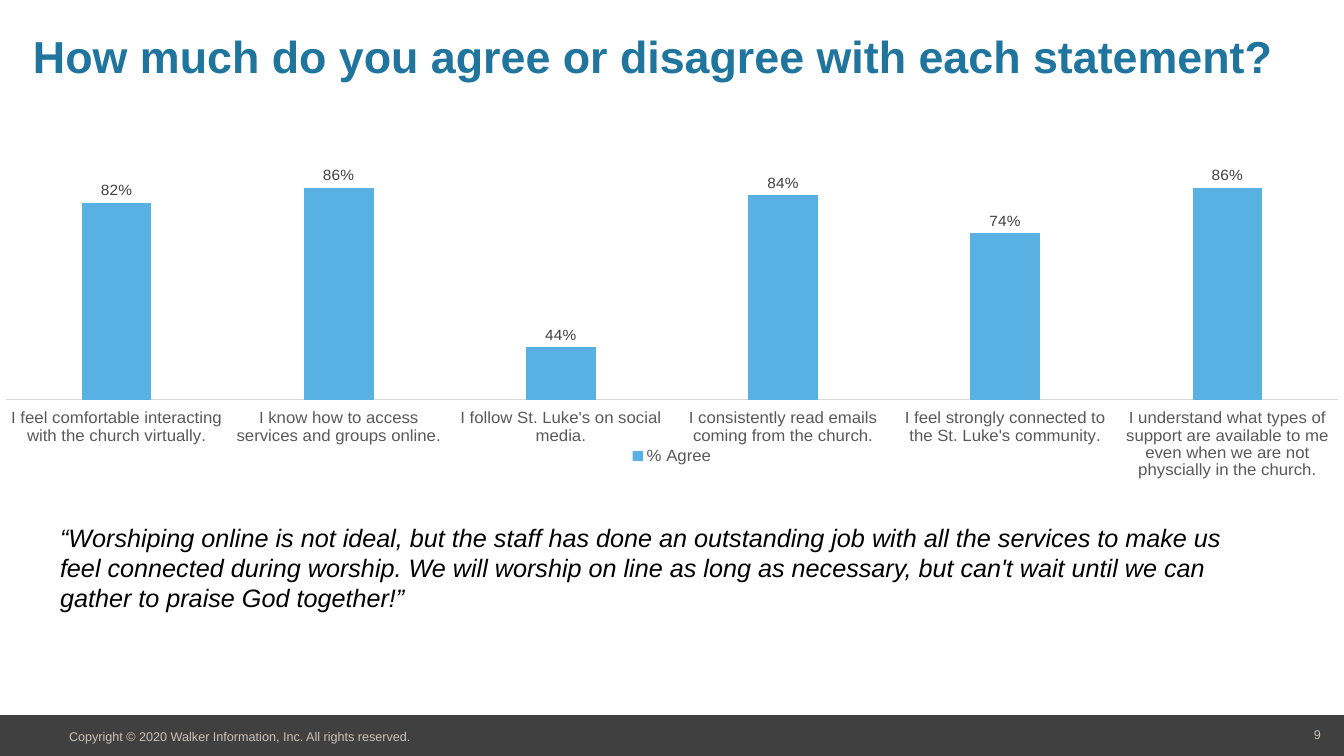
from dataclasses import dataclass

from lxml.etree import SubElement
from pptx import Presentation
from pptx.chart.data import CategoryChartData as ChartData
from pptx.dml.color import RGBColor as RGB
from pptx.enum.chart import XL_CHART_TYPE as Kind
from pptx.enum.chart import XL_LABEL_POSITION as Spot
from pptx.enum.chart import XL_LEGEND_POSITION as Side
from pptx.enum.chart import XL_TICK_LABEL_POSITION as Label
from pptx.enum.chart import XL_TICK_MARK as Tick
from pptx.enum.shapes import MSO_SHAPE as Shape
from pptx.enum.text import PP_ALIGN as Align
from pptx.oxml.ns import qn
from pptx.util import Pt

SCALE = 914400 / 100.8


@dataclass(frozen=True)
class Theme:
    face: str = "Arial"
    title: str = "20759E"
    ink: str = "000000"
    bar: str = "58B0E3"
    dark: str = "404040"
    grey: str = "595959"
    rule: str = "D9D9D9"
    pale: str = "CAC2B8"
    head: int = 32
    quote: int = 18
    axis: int = 12
    value: int = 11
    small: int = 9


class Page:
    def __init__(self, deck, theme):
        self.theme = theme
        self.shapes = deck.slides.add_slide(deck.slide_layouts[6]).shapes

    def place(self, box):
        return [round(n * SCALE) for n in box]

    def style(self, font, size, color, bold=False, italic=False):
        font.name = self.theme.face
        font.size = Pt(size)
        font.color.rgb = RGB.from_string(color)
        font.bold = bold
        font.italic = italic

    def band(self, box, color):
        band = self.shapes.add_shape(Shape.RECTANGLE, *self.place(box))
        band.shadow.inherit = False
        band.fill.solid()
        band.fill.fore_color.rgb = RGB.from_string(color)
        band.line.fill.background()

    def text(self, box, words, size, color, inset=(0, 0), align=Align.LEFT, **face):
        frame = self.shapes.add_textbox(*self.place(box)).text_frame
        frame.word_wrap = True
        side, top = self.place(inset)
        frame.margin_left = frame.margin_right = side
        frame.margin_top = frame.margin_bottom = top
        para = frame.paragraphs[0]
        para.text = words
        para.alignment = align
        self.style(para.font, size, color, **face)

    def chart(self, box, name, rows, area):
        theme = self.theme
        data = ChartData(number_format="0%")
        data.categories = [label for label, _ in rows]
        data.add_series(name, [share for _, share in rows])
        chart = self.shapes.add_chart(
            Kind.COLUMN_CLUSTERED, *self.place(box), data).chart
        self.style(chart.font, theme.axis, theme.grey)
        chart.has_title = False
        chart.has_legend = True
        chart.legend.position = Side.BOTTOM
        chart.legend.include_in_layout = False
        self.style(chart.legend.font, theme.axis, theme.grey)

        cats = chart.category_axis
        cats.major_tick_mark = cats.minor_tick_mark = Tick.NONE
        cats.tick_label_position = Label.LOW
        cats.format.line.color.rgb = RGB.from_string(theme.rule)
        cats.format.line.width = Pt(0.75)
        self.style(cats.tick_labels.font, theme.axis, theme.grey)
        scale = chart.value_axis
        scale.minimum_scale, scale.maximum_scale = 0.3, 0.9
        scale.has_major_gridlines = False
        scale.visible = False

        plot = chart.plots[0]
        plot.gap_width, plot.overlap = 219, -27
        plot.vary_by_categories = False
        bars = plot.series[0].format.fill
        bars.solid()
        bars.fore_color.rgb = RGB.from_string(theme.bar)
        plot.has_data_labels = True
        marks = plot.data_labels
        marks.show_value = True
        marks.number_format = "0%"
        marks.number_format_is_linked = False
        marks.position = Spot.OUTSIDE_END
        self.style(marks.font, theme.value, theme.dark)
        self.frame(chart, area)

    def frame(self, chart, area):
        root = chart._chartSpace.chart.plotArea
        for old in root.findall(qn("c:layout")):
            root.remove(old)
        layout = SubElement(root, qn("c:layout"))
        root.insert(0, layout)
        manual = SubElement(layout, qn("c:manualLayout"))
        parts = [("layoutTarget", "inner"), ("xMode", "edge"), ("yMode", "edge")]
        for tag, val in parts + list(zip("xywh", area)):
            SubElement(manual, qn(f"c:{tag}")).set("val", str(val))


def main():
    deck = Presentation()
    deck.slide_width = round(1344 * SCALE)
    deck.slide_height = round(756 * SCALE)
    theme = Theme()
    page = Page(deck, theme)
    page.band((0, 715, 1344, 41), theme.dark)
    page.text((1252, 727, 69, 15), "9", theme.small, theme.pale, align=Align.RIGHT)
    page.text((69, 729, 396, 15),
              "Copyright © 2020 Walker Information, Inc. All rights reserved.",
              theme.small, theme.pale)
    page.text((33, 29, 1283, 53),
              "How much do you agree or disagree with each statement?",
              theme.head, theme.title, bold=True)
    rows = [
        ("I feel comfortable interacting with the church virtually.", 0.82),
        ("I know how to access services and groups online.", 0.86),
        ("I follow St. Luke's on social media.", 0.44),
        ("I consistently read emails coming from the church.", 0.84),
        ("I feel strongly connected to the St. Luke's community.", 0.74),
        ("I understand what types of support are available to me even when "
         "we are not physcially in the church.", 0.86),
    ]
    page.chart((5, 157, 1334, 322), "% Agree", rows, (0, 0.05, 1, 0.73))
    page.text((50, 517, 1226, 102),
              "“Worshiping online is not ideal, but the staff has done an "
              "outstanding job with all the services to make us feel connected "
              "during worship. We will worship on line as long as necessary, but "
              "can't wait until we can gather to praise God together!”",
              theme.quote, theme.ink, inset=(10, 5), italic=True)
    deck.save("out.pptx")


if __name__ == "__main__":
    main()
